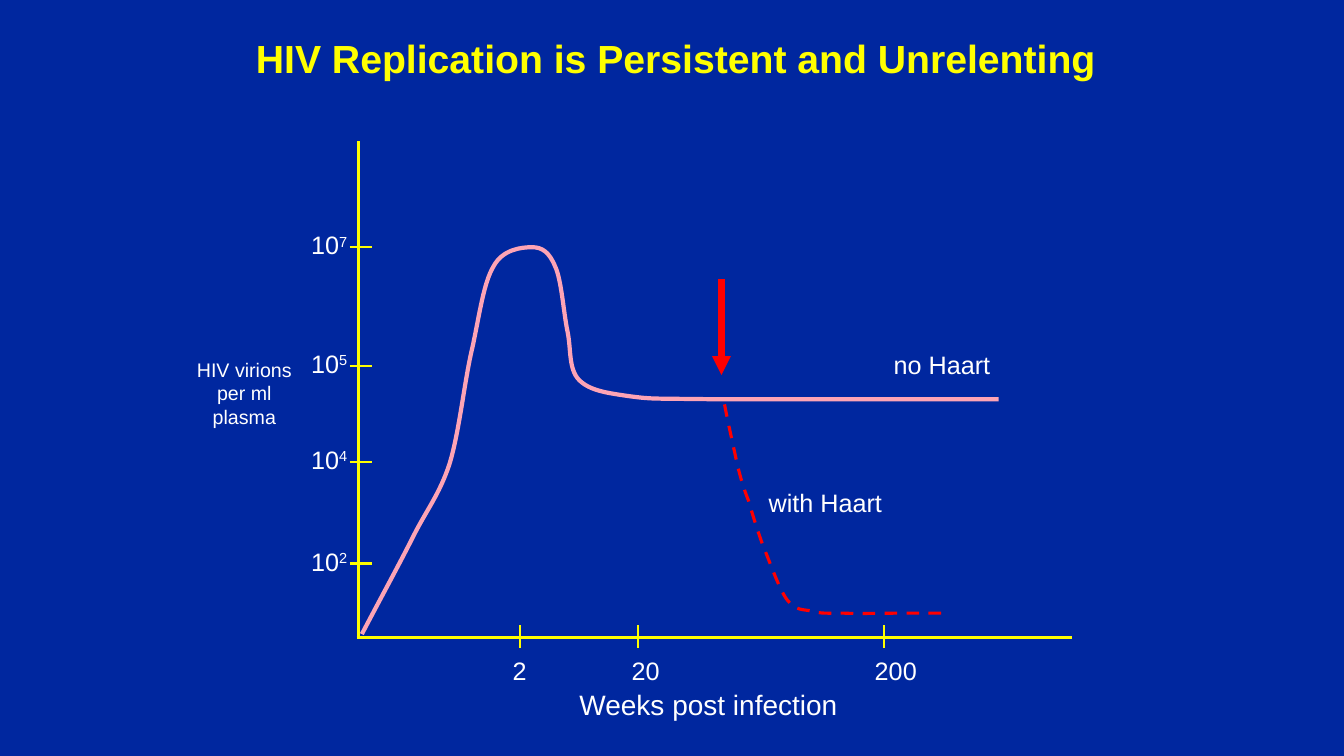
import pptx
import pptx.dml.color
import pptx.enum.dml
import pptx.enum.shapes
import pptx.enum.text
import pptx.oxml
import pptx.oxml.ns
import pptx.util
from dataclasses import dataclass

Cm = pptx.util.Cm


@dataclass(frozen=True)
class Theme:
    font: str = "Arial"
    background: str = "00279F"
    accent: str = "FFFF00"
    text: str = "FFFFFF"
    untreated: str = "FDA4B5"
    treatment: str = "FF0000"
    title_size: int = 28
    axis_title_size: int = 20
    label_size: int = 18
    small_size: int = 14


THEME = Theme()

# Lengths below are centimetres; plot positions are measured from its top left
TITLE_BOX = (6.2, 0.74, 21.92, 1.45)
PLOT_BOX = (9.04, 3.56, 17.98, 12.5)
LABEL_HEIGHT = 1.02
WEEK_TICKS = [("2", 4.06, 4.06, 0.86), ("20", 7.04, 7.24, 1.22), ("200", 13.23, 13.54, 1.57)]
VIRION_TICKS = [("7", 2.67), ("5", 5.66), ("4", 8.08), ("2", 10.64)]

# Each curve: a start point, then two control points and an end point per row
UNTREATED_CURVE = [
    (0.08, 12.42),
    (0.53, 11.56), (0.99, 10.72), (1.35, 10.01),
    (1.7, 9.3), (2.03, 8.92), (2.29, 8.13),
    (2.54, 7.32), (2.67, 5.99), (2.87, 5.18),
    (3.05, 4.34), (3.15, 3.56), (3.4, 3.15),
    (3.63, 2.72), (4.11, 2.67), (4.37, 2.67),
    (4.62, 2.67), (4.8, 2.79), (4.95, 3.15),
    (5.11, 3.48), (5.16, 4.29), (5.26, 4.78),
    (5.36, 5.23), (5.28, 5.74), (5.56, 6.02),
    (5.84, 6.3), (6.32, 6.35), (6.86, 6.43),
    (7.42, 6.5), (7.32, 6.48), (8.86, 6.5),
    (10.41, 6.5), (14.91, 6.5), (16.13, 6.5),
]
TREATED_CURVE = [
    (9.22, 6.63),
    (9.32, 7.16), (9.45, 7.7), (9.53, 8.1),
    (9.63, 8.51), (9.7, 8.74), (9.83, 9.07),
    (9.93, 9.42), (10.03, 9.75), (10.19, 10.19),
    (10.36, 10.59), (10.59, 11.28), (10.8, 11.56),
    (11.02, 11.84), (11.2, 11.79), (11.43, 11.84),
    (11.66, 11.91), (11.81, 11.89), (12.19, 11.89),
    (12.6, 11.91), (13.36, 11.89), (13.79, 11.89),
    (14.25, 11.89), (14.55, 11.89), (14.88, 11.89),
]


def color(value):
    return pptx.dml.color.RGBColor.from_string(value)


def add_text(slide, box, lines, size, text_color=THEME.text, bold=False, centered=False):
    """Each line is a list of runs; every run after the first is superscript."""
    frame = slide.shapes.add_textbox(*(Cm(length) for length in box)).text_frame
    frame.word_wrap = False
    frame.auto_size = pptx.enum.text.MSO_AUTO_SIZE.SHAPE_TO_FIT_TEXT
    for index, runs in enumerate(lines):
        paragraph = frame.add_paragraph() if index else frame.paragraphs[0]
        if centered:
            paragraph.alignment = pptx.enum.text.PP_ALIGN.CENTER
        for position, text in enumerate(runs):
            run = paragraph.add_run()
            run.text = text
            run.font.name = THEME.font
            run.font.size = pptx.util.Pt(size)
            run.font.bold = bold
            run.font.color.rgb = color(text_color)
            if position:
                run.font._element.set("baseline", "30000")


def add_line(slide, start, end, line_color, width):
    connector = slide.shapes.add_connector(
        pptx.enum.shapes.MSO_CONNECTOR.STRAIGHT, *(Cm(length) for length in start + end))
    connector.line.color.rgb = color(line_color)
    connector.line.width = pptx.util.Pt(width)
    connector._element.spPr.append(pptx.oxml.parse_xml(
        f"<a:effectLst {pptx.oxml.ns.nsdecls('a')}/>"))
    return connector


def add_curve(slide, points, line_color, width):
    points = [(Cm(x), Cm(y)) for x, y in points]
    builder = slide.shapes.build_freeform(*points[0])
    builder.add_line_segments(points[1:], close=False)
    shape = builder.convert_to_shape()
    shape.shadow.inherit = False
    shape.fill.background()
    shape.line.color.rgb = color(line_color)
    shape.line.width = pptx.util.Pt(width)
    # Gather every three straight segments into one cubic Bezier segment
    segments = list(shape._element.iter(pptx.oxml.ns.qn("a:lnTo")))
    for first in range(0, len(segments), 3):
        cubic = pptx.oxml.parse_xml(f"<a:cubicBezTo {pptx.oxml.ns.nsdecls('a')}/>")
        segments[first].addprevious(cubic)
        for segment in segments[first:first + 3]:
            cubic.append(segment[0])
            segment.getparent().remove(segment)
    return shape


def draw_title(slide, box):
    add_text(slide, box, [["HIV Replication is Persistent and Unrelenting"]],
             THEME.title_size, THEME.accent, bold=True)


def draw_axes(slide, box):
    left, top, width, height = box
    bottom = top + height
    add_line(slide, (left, top), (left, bottom), THEME.accent, 2.25)
    add_line(slide, (left - 0.05, bottom), (left + width, bottom), THEME.accent, 2.25)

    # Weeks
    for text, tick, center, label_width in WEEK_TICKS:
        x = left + tick
        add_line(slide, (x, bottom - 0.3), (x, bottom + 0.28), THEME.accent, 1.5)
        add_text(slide, (left + center - label_width / 2, bottom + 0.33, label_width, LABEL_HEIGHT),
                 [[text]], THEME.label_size)
    add_text(slide, (left + 5.31, bottom + 1.14, 7.01, 1.09),
             [["Weeks post infection"]], THEME.axis_title_size)

    # Virions, as powers of ten
    for exponent, tick in VIRION_TICKS:
        y = top + tick
        add_line(slide, (left - 0.23, y), (left + 0.33, y), THEME.accent, 1.5)
        add_text(slide, (left - 1.45, y - 0.57, 1.45, LABEL_HEIGHT),
                 [["10", exponent]], THEME.label_size)
    add_text(slide, (left - 4.34, top + 5.33, 2.92, 2.06),
             [["HIV virions"], ["per ml"], ["plasma"]], THEME.small_size, centered=True)


def draw_curves(slide, box):
    left, top = box[:2]

    def place(points):
        return [(left + x, top + y) for x, y in points]

    # Start of treatment
    arrow = add_line(slide, *place([(9.14, 3.48), (9.14, 5.89)]), THEME.treatment, 4.5)
    arrow.line._get_or_add_ln().append(pptx.oxml.parse_xml(
        f"<a:tailEnd {pptx.oxml.ns.nsdecls('a')} type='triangle'/>"))

    # Viral load with and without treatment
    treated = add_curve(slide, place(TREATED_CURVE), THEME.treatment, 2.25)
    treated.line.dash_style = pptx.enum.dml.MSO_LINE.DASH
    add_curve(slide, place(UNTREATED_CURVE), THEME.untreated, 3)
    for text, x, y, width in [("no Haart", 13.23, 5.11, 2.95), ("with Haart", 10.08, 8.59, 3.38)]:
        add_text(slide, (left + x, top + y, width, LABEL_HEIGHT), [[text]], THEME.label_size)


def main():
    presentation = pptx.Presentation()
    presentation.slide_width = Cm(33.87)
    presentation.slide_height = Cm(19.05)
    slide = presentation.slides.add_slide(presentation.slide_layouts[6])
    slide.background.fill.solid()
    slide.background.fill.fore_color.rgb = color(THEME.background)
    draw_title(slide, TITLE_BOX)
    draw_axes(slide, PLOT_BOX)
    draw_curves(slide, PLOT_BOX)
    presentation.save("out.pptx")


if __name__ == "__main__":
    main()
